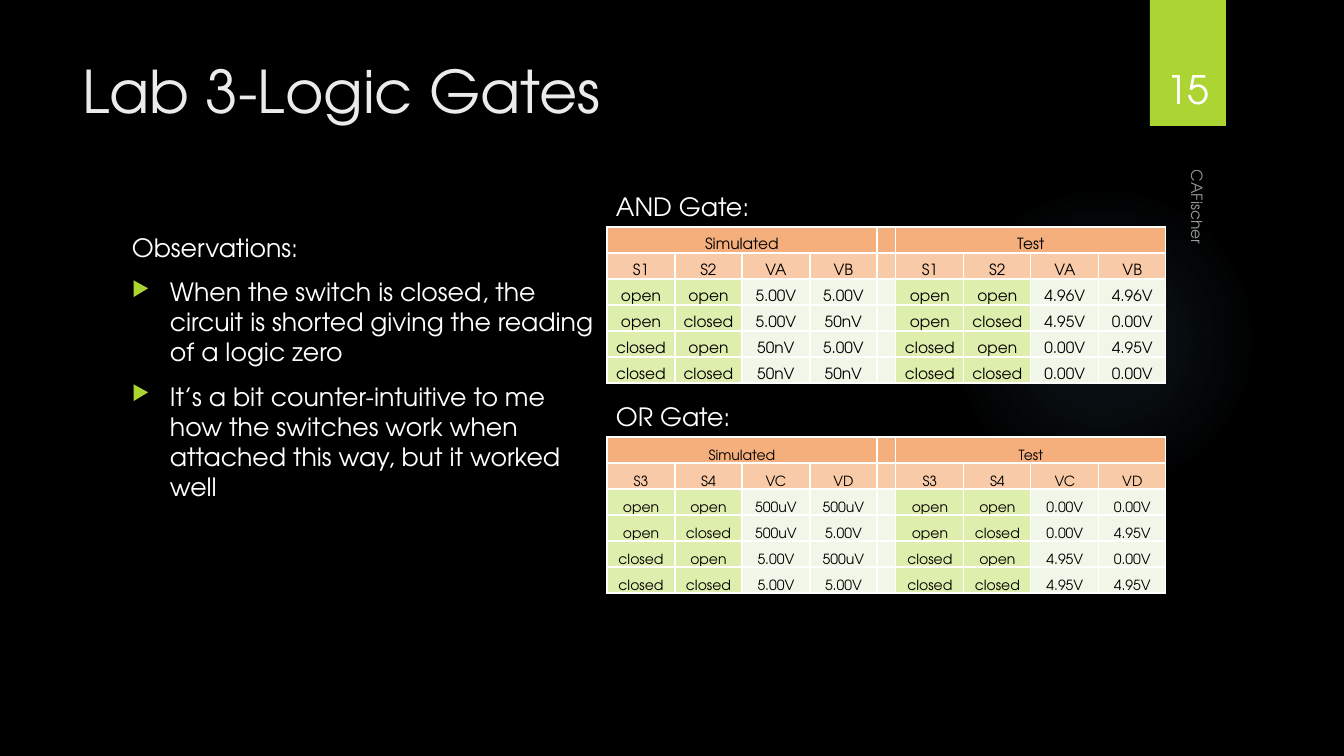
from itertools import product

from lxml import etree
from pptx import Presentation
from pptx import util as u
from pptx.dml.color import RGBColor
from pptx.enum import shapes, text
from pptx.oxml import parse_xml
from pptx.oxml.ns import qn

SCALE = 914400 / 100.8
FONT = "TeX Gyre Adventor"
NAMESPACE = 'xmlns:a="http://schemas.openxmlformats.org/drawingml/2006/main"'
COLORS = {
    "background": "000000", "title": "EBEBEB", "text": "FFFFFF",
    "accent": "ACD433", "glow": "7AC4F0", "cell_text": "000000",
    "group": "F5AF7C", "heading": "F9CAA7", "switch": "DEEEAD",
    "reading": "F1F7E8", "border": "FFFFFF",
}
SWITCH_STATES = list(product(("open", "closed"), repeat=2))
AND_GATE = {
    "headings": ("S1", "S2", "VA", "VB"),
    "Simulated": [("5.00V", "5.00V"), ("5.00V", "50nV"), ("50nV", "5.00V"), ("50nV", "50nV")],
    "Test": [("4.96V", "4.96V"), ("4.95V", "0.00V"), ("0.00V", "4.95V"), ("0.00V", "0.00V")],
}
OR_GATE = {
    "headings": ("S3", "S4", "VC", "VD"),
    "Simulated": [("500uV", "500uV"), ("500uV", "5.00V"), ("5.00V", "500uV"), ("5.00V", "5.00V")],
    "Test": [("0.00V", "0.00V"), ("0.00V", "4.95V"), ("4.95V", "0.00V"), ("4.95V", "4.95V")],
}


def px(length):
    return u.Emu(round(length * SCALE))


def rgb(name):
    return RGBColor.from_string(COLORS[name])


def add_bullet(para):
    properties = para._p.get_or_add_pPr()
    properties.set("marL", str(px(38)))
    properties.set("indent", str(px(-38)))
    for element in (
        f'<a:buClr {NAMESPACE}><a:srgbClr val="{COLORS["accent"]}"/></a:buClr>',
        f'<a:buSzPct {NAMESPACE} val="80000"/>',
        f'<a:buChar {NAMESPACE} char="▶"/>',
    ):
        properties.append(parse_xml(element))


def write(para, words, size=18, color="text", align=text.PP_ALIGN.LEFT,
          bullet=False, before=0, opacity=100):
    if bullet:
        add_bullet(para)
    para.alignment = align
    para.space_before = u.Pt(before)
    if not words:
        para._p.get_or_add_endParaRPr().set("sz", str(size * 100))
        return
    span = para.add_run()
    span.text = words
    span.font.name = FONT
    span.font.size = u.Pt(size)
    span.font.color.rgb = rgb(color)
    if opacity < 100:
        tint = span._r.find(".//" + qn("a:srgbClr"))
        etree.SubElement(tint, qn("a:alpha")).set("val", str(opacity * 1000))


def add_text_box(page, left, top, width, height, anchor=text.MSO_ANCHOR.TOP, wrap=True):
    box = page.shapes.add_textbox(px(left), px(top), px(width), px(height))
    box.text_frame.word_wrap = wrap
    box.text_frame.vertical_anchor = anchor
    return box


def add_shape(page, kind, left, top, width, height, color):
    shape = page.shapes.add_shape(kind, px(left), px(top), px(width), px(height))
    shape.shadow.inherit = False
    shape.fill.solid()
    shape.fill.fore_color.rgb = rgb(color)
    shape.line.fill.background()
    return shape


def add_glow(page, left, top, size):
    glow = add_shape(page, shapes.MSO_SHAPE.OVAL, left, top, size, size, "glow")
    stops = "".join(
        f'<a:gs pos="{place * 1000}"><a:srgbClr val="{COLORS["glow"]}">'
        f'<a:alpha val="{alpha * 1000}"/></a:srgbClr></a:gs>'
        for place, alpha in ((0, 7), (36, 6), (69, 0), (100, 0))
    )
    gradient = parse_xml(
        f'<a:gradFill {NAMESPACE}><a:gsLst>{stops}</a:gsLst><a:path path="circle">'
        '<a:fillToRect l="50000" t="50000" r="50000" b="50000"/></a:path></a:gradFill>'
    )
    properties = glow._element.spPr
    properties.replace(properties.find(qn("a:solidFill")), gradient)


def add_page_marker(page, left, top, width, height):
    add_shape(page, shapes.MSO_SHAPE.RECTANGLE, left, top, width, height, "accent")
    number = add_text_box(page, left - 9, top + 32, width + 18, height - 41,
                          anchor=text.MSO_ANCHOR.BOTTOM)
    write(number.text_frame.paragraphs[0], "15", size=28, align=text.PP_ALIGN.CENTER)
    author = add_text_box(page, left - 163, top + 356, 425, 33, anchor=text.MSO_ANCHOR.BOTTOM)
    author.rotation = 90
    write(author.text_frame.paragraphs[0], "CAFischer", size=11, opacity=60)


def add_title(page, left, top, width, height):
    title = page.shapes.title
    title.left, title.top, title.width, title.height = map(px, (left, top, width, height))
    title.text_frame.auto_size = text.MSO_AUTO_SIZE.NONE
    title.text_frame.vertical_anchor = text.MSO_ANCHOR.TOP
    write(title.text_frame.paragraphs[0], "Lab 3-Logic Gates", size=42, color="title")


def add_observations(page, left, top, width, height):
    frame = add_text_box(page, left, top, width, height).text_frame
    write(frame.paragraphs[0], "Observations:")
    for remark in (
        "When the switch is closed, the circuit is shorted giving the reading of a logic zero",
        "It’s a bit counter-intuitive to me how the switches work when attached this way, "
        "but it worked well",
    ):
        write(frame.add_paragraph(), remark, bullet=True, before=10)


def format_cell(cell, words, fill, size):
    cell.margin_left = cell.margin_right = cell.margin_top = px(1)
    cell.margin_bottom = 0
    cell.vertical_anchor = text.MSO_ANCHOR.BOTTOM
    write(cell.text_frame.paragraphs[0], words, size=size, color="cell_text",
          align=text.PP_ALIGN.CENTER)
    properties = cell._tc.get_or_add_tcPr()
    for side in ("lnL", "lnR", "lnT", "lnB"):
        properties.append(parse_xml(
            f'<a:{side} {NAMESPACE} w="12700"><a:solidFill>'
            f'<a:srgbClr val="{COLORS["border"]}"/></a:solidFill></a:{side}>'
        ))
    cell.fill.solid()
    cell.fill.fore_color.rgb = rgb(fill)


def add_gate(page, left, top, name, gate, size):
    label = add_text_box(page, left - 1, top - 41, 156, 40, wrap=False)
    write(label.text_frame.paragraphs[0], name)

    half = [68, 67, 68, 67]
    widths = half + [19] + half
    headings = gate["headings"]
    rows = [("Simulated", "", "", "", "", "Test", "", "", ""), (*headings, "", *headings)]
    for states, simulated, test in zip(SWITCH_STATES, gate["Simulated"], gate["Test"]):
        rows.append((*states, *simulated, "", *states, *test))

    table = page.shapes.add_table(len(rows), len(widths), px(left), px(top),
                                  px(sum(widths)), px(26 * len(rows))).table
    table.first_row = table.horz_banding = False
    for column, width in zip(table.columns, widths):
        column.width = px(width)
    body_fills = ["switch", "switch", "reading", "reading"]
    body_fills = body_fills + ["reading"] + body_fills
    for row_index, row in enumerate(rows):
        table.rows[row_index].height = px(26)
        fills = {0: ["group"] * 9, 1: ["heading"] * 9}.get(row_index, body_fills)
        for column_index, (words, fill) in enumerate(zip(row, fills)):
            format_cell(table.cell(row_index, column_index), words, fill, size)
    for first in (0, 5):
        table.cell(0, first).merge(table.cell(0, first + 3))


def main():
    deck = Presentation()
    deck.slide_width, deck.slide_height = px(1344), px(756)
    page = deck.slides.add_slide(deck.slide_layouts[5])
    page.background.fill.solid()
    page.background.fill.fore_color.rgb = rgb("background")
    add_glow(page, 949, 184, 310)
    add_page_marker(page, 1150, 0, 76, 126)
    add_title(page, 72, 50, 1037, 154)
    add_observations(page, 122, 227, 485, 463)
    add_gate(page, 607, 227, "AND Gate:", AND_GATE, 11)
    add_gate(page, 607, 437, "OR Gate:", OR_GATE, 10)
    deck.save("out.pptx")


if __name__ == "__main__":
    main()
